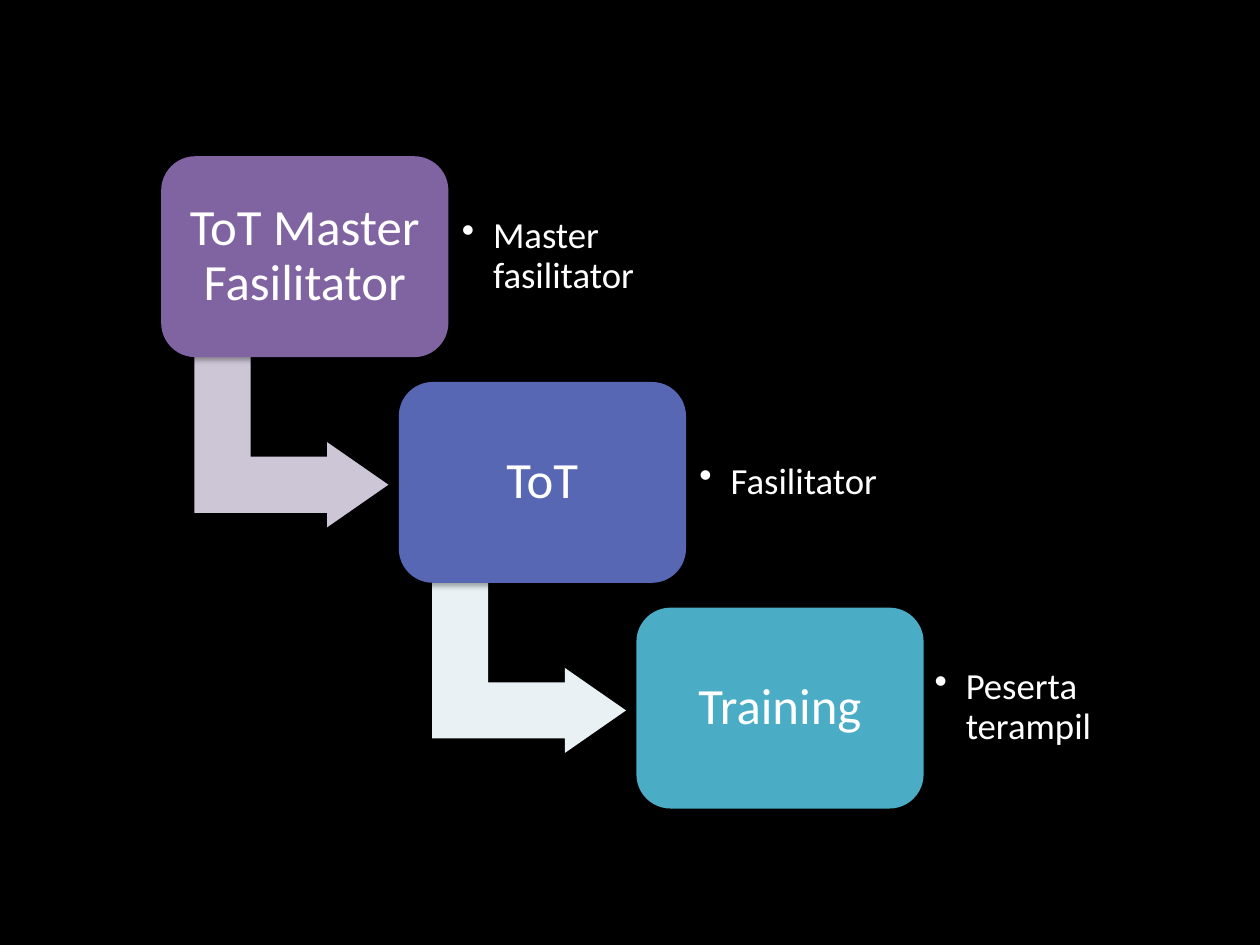
from lxml import etree
from pptx import Presentation
from pptx import util as u
from pptx.dml.color import RGBColor
from pptx.enum import shapes, text
from pptx.oxml import parse_xml
from pptx.oxml.ns import nsdecls, qn

BLACK = RGBColor(0x00, 0x00, 0x00)
WHITE = RGBColor(0xFF, 0xFF, 0xFF)
PURPLE = RGBColor(0x80, 0x64, 0xA2)
INDIGO = RGBColor(0x57, 0x67, 0xB4)
TEAL = RGBColor(0x4B, 0xAC, 0xC6)
LILAC = RGBColor(0xCD, 0xC6, 0xD7)
PALE_BLUE = RGBColor(0xE9, 0xF1, 0xF5)

SHADOW = (
    f'<a:effectLst {nsdecls("a")}>'
    '<a:outerShdw blurRad="40000" dist="23000" dir="5400000" rotWithShape="0">'
    '<a:srgbClr val="000000"><a:alpha val="35000"/></a:srgbClr>'
    '</a:outerShdw></a:effectLst>'
)


def add_filled_shape(kind, left, top, width, height, color, adjustments):
    shape = slide.shapes.add_shape(kind, u.Cm(left), u.Cm(top), u.Cm(width), u.Cm(height))
    shape.shadow.inherit = False
    shape.fill.solid()
    shape.fill.fore_color.rgb = color
    shape.line.fill.background()
    for index, value in enumerate(adjustments):
        shape.adjustments[index] = value
    return shape


def write_text(shape, wording, size, inset, alignment):
    frame = shape.text_frame
    frame.word_wrap = True
    frame.vertical_anchor = text.MSO_ANCHOR.MIDDLE
    frame.margin_left = frame.margin_right = u.Cm(inset)
    frame.margin_top = frame.margin_bottom = u.Cm(inset)
    paragraph = frame.paragraphs[0]
    paragraph.alignment = alignment
    paragraph.line_spacing = 0.9
    run = paragraph.add_run()
    run.text = wording
    run.font.name = "Calibri"
    run.font.size = u.Pt(size)
    run.font.color.rgb = WHITE
    return paragraph


presentation = Presentation()
presentation.slide_width = u.Cm(25.4)
presentation.slide_height = u.Cm(19.05)
slide = presentation.slides.add_slide(presentation.slide_layouts[6])
slide.background.fill.solid()
slide.background.fill.fore_color.rgb = BLACK

steps = [
    ("ToT Master Fasilitator", "Master fasilitator", PURPLE, LILAC, 0.28),
    ("ToT", "Fasilitator", INDIGO, PALE_BLUE, 0.28),
    ("Training", "Peserta terampil", TEAL, None, 0.23),
]

for index, (title, result, color, arrow_color, result_inset) in enumerate(steps):
    left = 3.25 + 4.79 * index
    top = 3.15 + 4.55 * index

    if arrow_color is not None:
        arrow = add_filled_shape(
            shapes.MSO_SHAPE.BENT_UP_ARROW, left + 0.91, top + 3.81, 3.43, 3.91,
            arrow_color, [0.33, 0.25, 0.36],
        )
        arrow.rotation = 90

    box = add_filled_shape(
        shapes.MSO_SHAPE.ROUNDED_RECTANGLE, left, top, 5.79, 4.05, color, [0.17]
    )
    properties = box._element.spPr
    properties.replace(properties.find(qn("a:effectLst")), parse_xml(SHADOW))
    write_text(box, title, 29, 0.3, text.PP_ALIGN.CENTER)

    label = slide.shapes.add_textbox(
        u.Cm(left + 5.78), u.Cm(top + 0.38), u.Cm(4.22), u.Cm(3.28)
    )
    paragraph = write_text(label, result, 21, result_inset, text.PP_ALIGN.LEFT)
    paragraph_properties = paragraph._p.get_or_add_pPr()
    paragraph_properties.set("marL", str(u.Cm(0.63)))
    paragraph_properties.set("indent", str(-u.Cm(0.63)))
    bullet = etree.SubElement(paragraph_properties, qn("a:buChar"))
    bullet.set("char", "•")

presentation.save("out.pptx")
